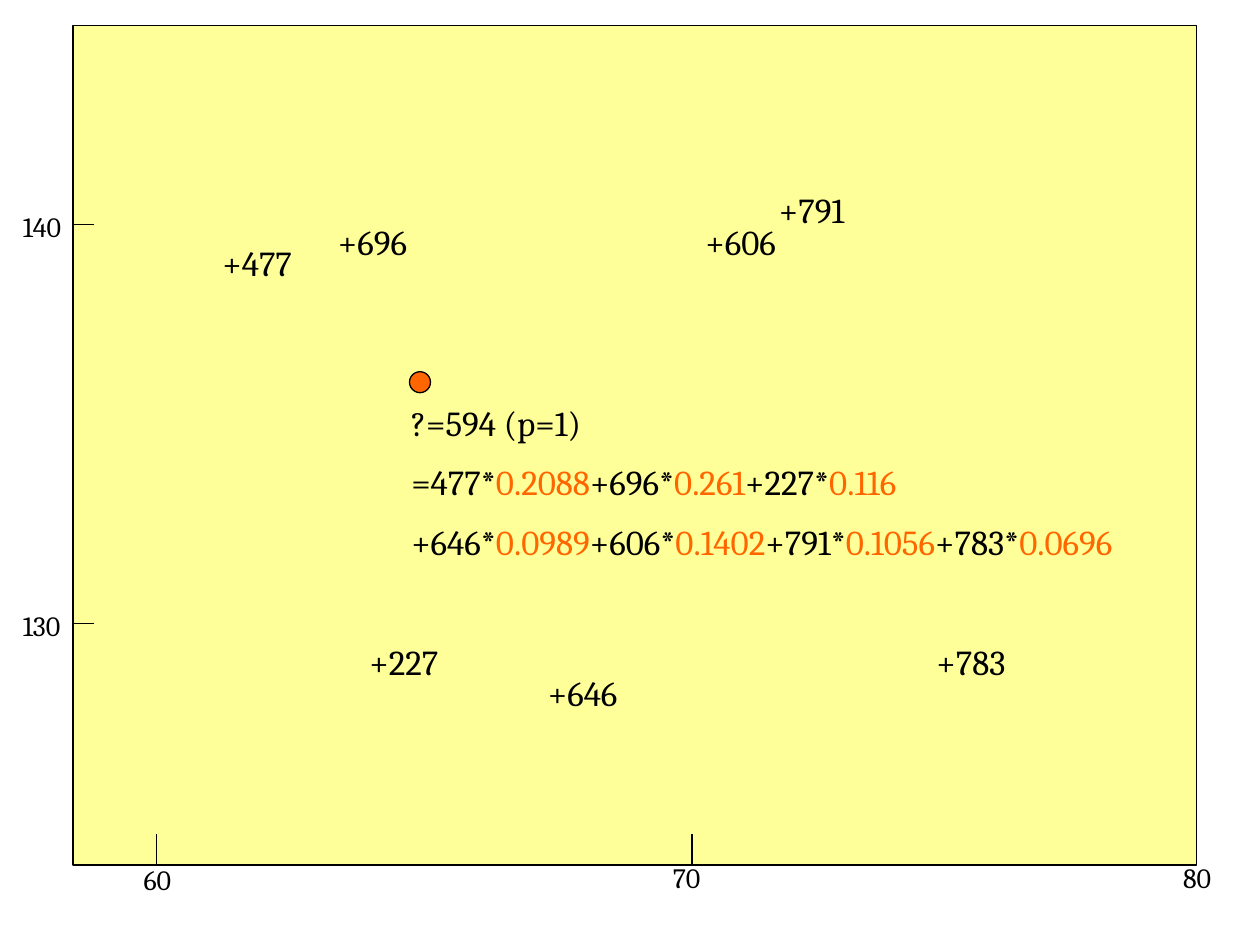
from dataclasses import dataclass

from lxml.etree import SubElement
from pptx import Presentation
from pptx.dml.color import RGBColor
from pptx.enum.shapes import MSO_CONNECTOR, MSO_SHAPE
from pptx.enum.text import MSO_ANCHOR, MSO_AUTO_SIZE
from pptx.oxml.ns import qn
from pptx.util import Inches, Pt


@dataclass(frozen=True)
class Theme:
    """Colours, font and sizes of the map."""
    ink: RGBColor = RGBColor(0, 0, 0)
    accent: RGBColor = RGBColor(0xFF, 0x66, 0x00)
    ground: RGBColor = RGBColor(0xFF, 0xFF, 0x99)
    font: str = "Cambria"
    axis_size: Pt = Pt(16)
    value_size: Pt = Pt(20)
    line_gap: Pt = Pt(10)
    outline: Pt = Pt(0.75)


THEME = Theme()
COLUMNS, ROWS = 120, 90
LEFT, TOP, RIGHT, BOTTOM = 6.95, 2.4, 113.95, 82.4

Y_TICKS = [("140", 21.4, 19.4), ("130", 59.4, 57.4)]
X_TICKS = [("60", 14.9, 12.5, 81.6), ("70", 65.9, 62.9, 81.4)]
SAMPLES = [
    ("+477", 20, 22.4),
    ("+696", 31, 20.4),
    ("+227", 34, 60.4),
    ("+646", 51, 63.4),
    ("+606", 66, 20.4),
    ("+791", 73, 17.4),
    ("+783", 88, 60.4),
]
ESTIMATE = [
    ["?=594 (p=1)"],
    ["=477*", "0.2088", "+696*", "0.261", "+227*", "0.116"],
    ["+646*", "0.0989", "+606*", "0.1402", "+791*", "0.1056", "+783*", "0.0696"],
]


def grid(column, row):
    """Turn grid columns and rows into slide lengths."""
    return Inches(10 * column / COLUMNS), Inches(7.5 * row / ROWS)


def add_outlined(page, kind, column, row, columns, rows, colour):
    """Add a filled preset shape with a thin dark outline."""
    shape = page.shapes.add_shape(kind, *grid(column, row), *grid(columns, rows))
    shape.shadow.inherit = False
    shape.fill.solid()
    shape.fill.fore_color.rgb = colour
    shape.line.color.rgb = THEME.ink
    shape.line.width = THEME.outline


def add_tick(page, start, end):
    """Add a tick mark between two grid points."""
    tick = page.shapes.add_connector(MSO_CONNECTOR.STRAIGHT, *grid(*start), *grid(*end))
    tick.line.color.rgb = THEME.ink
    tick.line.width = THEME.outline
    SubElement(tick.element.spPr, qn("a:effectLst"))


def add_text(page, lines, column, row, columns, rows, size):
    """Add lines in a fixed box, their spans alternating between ink and accent."""
    box = page.shapes.add_textbox(*grid(column, row), *grid(columns, rows))
    frame = box.text_frame
    frame.word_wrap = True
    frame.auto_size = MSO_AUTO_SIZE.NONE
    frame.margin_right = 0
    frame.vertical_anchor = MSO_ANCHOR.TOP
    for number, spans in enumerate(lines):
        para = frame.add_paragraph() if number else frame.paragraphs[0]
        if number:
            para.space_before = THEME.line_gap
        for position, text in enumerate(spans):
            span = para.add_run()
            span.text = text
            span.font.name = THEME.font
            span.font.size = size
            span.font.color.rgb = THEME.accent if position % 2 else THEME.ink


def add_axes(page):
    """Add the tick marks and labels of both axes."""
    for label, row, label_row in Y_TICKS:
        add_tick(page, (LEFT, row), (LEFT + 2, row))
        add_text(page, [[label]], 1, label_row, 6.4, 4.4, THEME.axis_size)
    for label, column, label_column, label_row in X_TICKS:
        add_tick(page, (column, BOTTOM), (column, BOTTOM - 3))
        add_text(page, [[label]], label_column, label_row, 5, 4.4, THEME.axis_size)
    add_text(page, [["80"]], 111.5, 81.4, 5, 4.4, THEME.axis_size)


def main():
    """Build the interpolation map and save it."""
    deck = Presentation()
    deck.slide_width, deck.slide_height = grid(COLUMNS, ROWS)
    page = deck.slides.add_slide(deck.slide_layouts[6])
    add_outlined(page, MSO_SHAPE.RECTANGLE, LEFT, TOP,
                 RIGHT - LEFT, BOTTOM - TOP, THEME.ground)
    add_outlined(page, MSO_SHAPE.OVAL, 39, 35.4, 2, 2, THEME.accent)
    add_axes(page)
    for value, column, row in SAMPLES:
        add_text(page, [[value]], column, row, 9.2, 5.2, THEME.value_size)
    add_text(page, ESTIMATE, 38, 37.6, 73.9, 17.4, THEME.value_size)
    deck.save("out.pptx")


if __name__ == "__main__":
    main()
